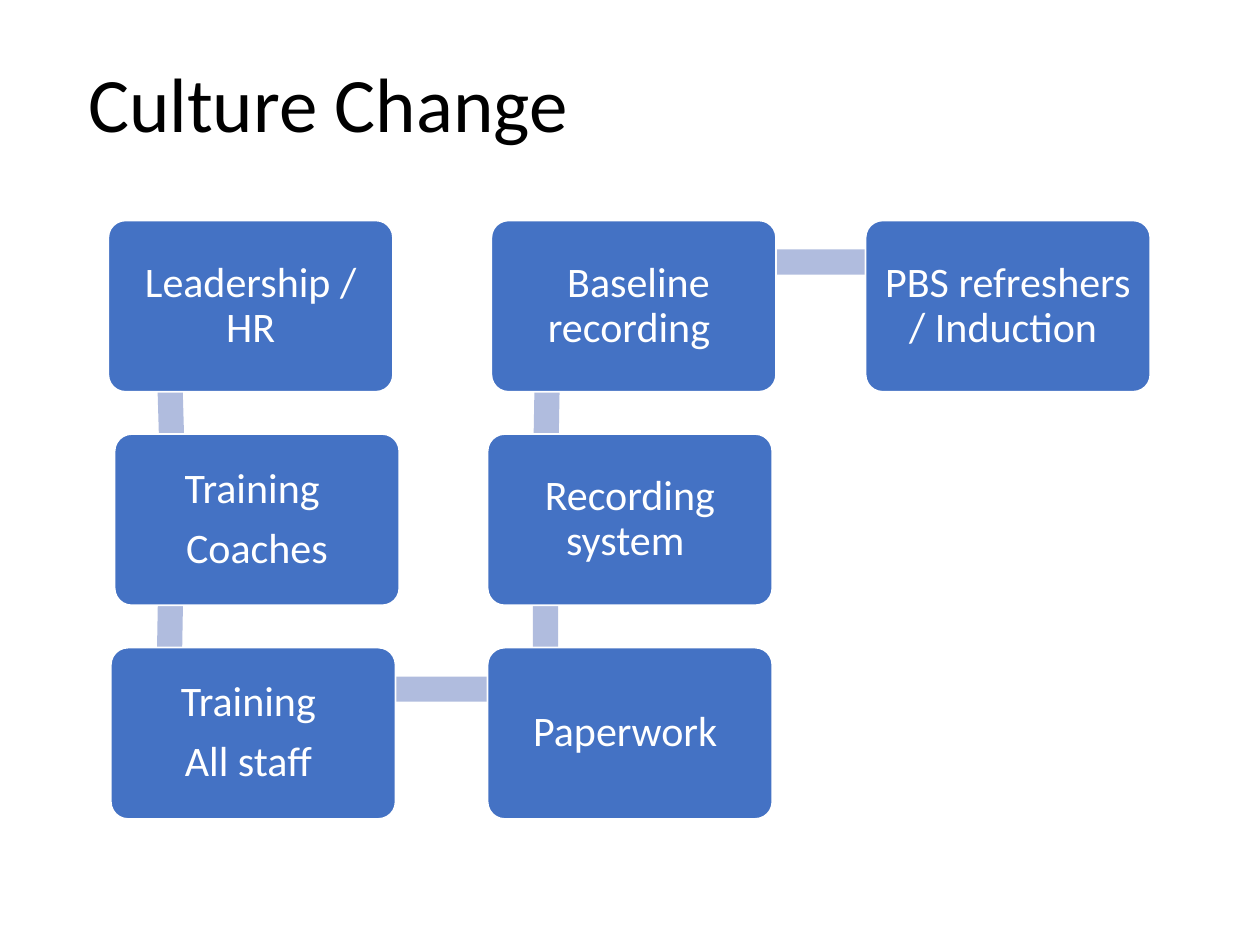
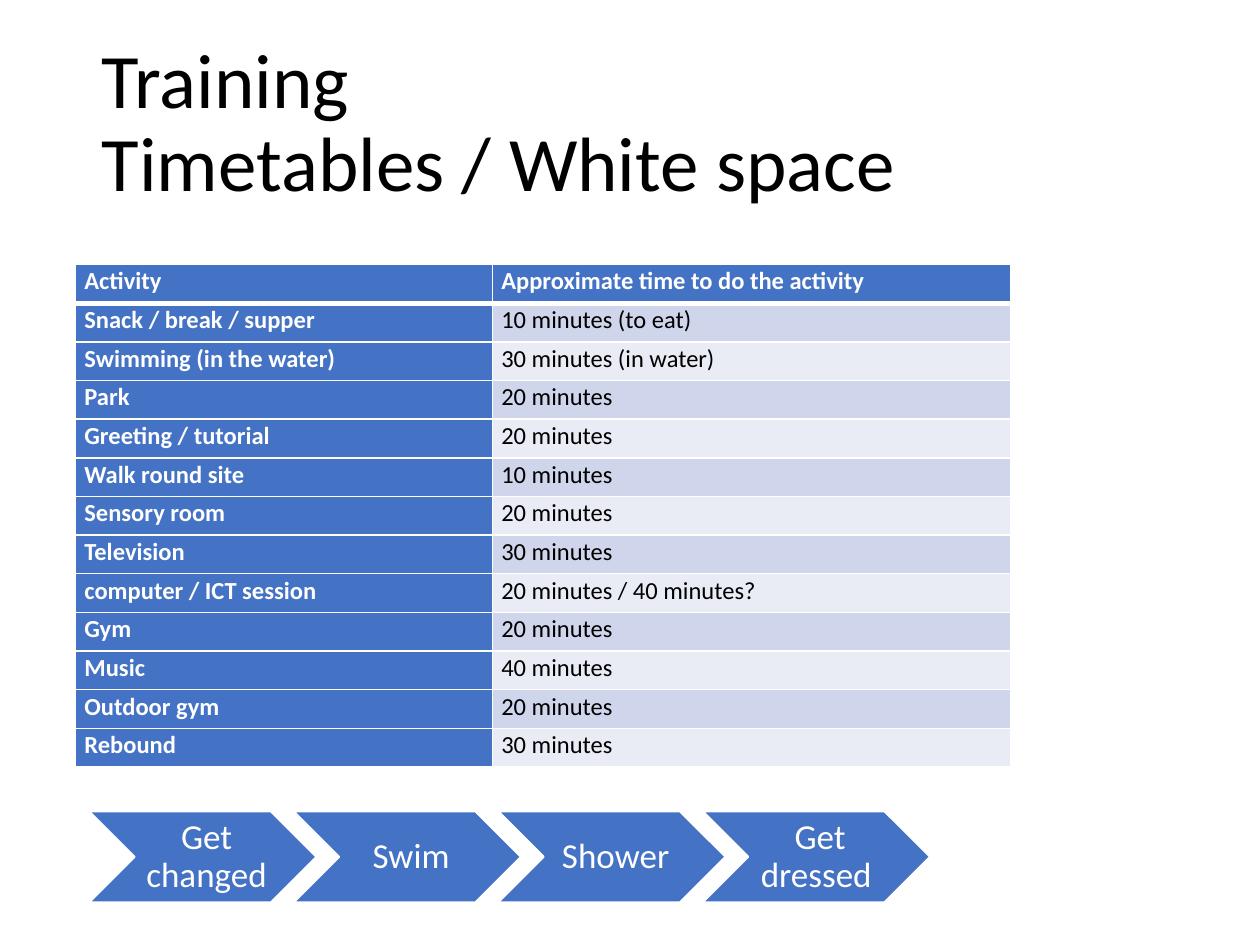
from itertools import pairwise, zip_longest
from math import atan2, degrees, hypot

from lxml.etree import SubElement
from pptx import Presentation
from pptx.dml.color import RGBColor
from pptx.enum.shapes import MSO_SHAPE
from pptx.enum.text import MSO_ANCHOR, PP_ALIGN
from pptx.oxml.ns import qn
from pptx.util import Inches, Pt

FONT = "Calibri"
BLUE, PALE_BLUE, WHITE, BLACK = "4472C4", "B0BCDE", "FFFFFF", "000000"
BANDS = "CFD5EA", "E9EBF5"
TITLE_SIZE = 6.89, 1.46

# column, row, sideways nudge, text
STEPS = [
    (0, 0, -0.01, "Leadership / HR"),
    (0, 1, 0.04, "Training \nCoaches"),
    (0, 2, 0.01, "Training \nAll staff "),
    (1, 2, 0, "Paperwork "),
    (1, 1, 0, "Recording system "),
    (1, 0, 0.03, " Baseline recording "),
    (2, 0, 0, "PBS refreshers / Induction "),
]
ACTIVITIES = [
    ("Activity", "Approximate time to do the activity"),
    ("Snack / break / supper", "10 minutes (to eat)"),
    ("Swimming (in the water)", "30 minutes (in water)"),
    ("Park", "20 minutes"),
    ("Greeting / tutorial", "20 minutes"),
    ("Walk round site", "10 minutes"),
    ("Sensory room", "20 minutes"),
    ("Television", "30 minutes"),
    ("computer / ICT session", "20 minutes / 40 minutes?"),
    ("Gym", "20 minutes"),
    ("Music", "40 minutes"),
    ("Outdoor gym", "20 minutes"),
    ("Rebound", "30 minutes"),
]
SWIM_STAGES = ["Get changed", "Swim", "Shower", "Get dressed "]


def rgb(hex_color):
    """Turn a hex string into a colour."""
    return RGBColor.from_string(hex_color)


def style_text(tf, size, color, spacing, bold=False, align=PP_ALIGN.LEFT, after=0):
    """Give every paragraph of a frame the same look."""
    for p in tf.paragraphs:
        p.alignment = align
        p.line_spacing = spacing
        p.space_after = Pt(after)
        p.font.name, p.font.size, p.font.bold = FONT, Pt(size), bold
        p.font.color.rgb = rgb(color)


def set_insets(target, sides, ends):
    """Set the margins of a frame or cell as left and right, then top and bottom."""
    target.margin_left, target.margin_right = map(Inches, sides)
    target.margin_top, target.margin_bottom = map(Inches, ends)


def add_block(slide, kind, box, fill, line=None):
    """Add a flat preset shape with a plain fill."""
    sp = slide.shapes.add_shape(kind, *map(Inches, box))
    sp.shadow.inherit = False
    sp.fill.solid()
    sp.fill.fore_color.rgb = rgb(fill)
    if line:
        sp.line.color.rgb = rgb(line)
        sp.line.width = Pt(1)
    else:
        sp.line.fill.background()
    return sp


def add_label(sp, text, size, sides, ends):
    """Write centred white text into a shape."""
    tf = sp.text_frame
    tf.word_wrap = True
    tf.vertical_anchor = MSO_ANCHOR.MIDDLE
    set_insets(tf, sides, ends)
    tf.text = text
    style_text(tf, size, WHITE, 0.9, align=PP_ALIGN.CENTER, after=0.35 * size)


def add_title(slide, text, left, top):
    """Add the slide title."""
    tf = slide.shapes.add_textbox(*map(Inches, (left, top, *TITLE_SIZE))).text_frame
    tf.word_wrap = True
    tf.vertical_anchor = MSO_ANCHOR.MIDDLE
    tf.text = text
    style_text(tf, 44, BLACK, 0.9)


def add_link(slide, start, end):
    """Add the pale bar that runs from one step to the next."""
    (x1, y1), (x2, y2) = start, end
    length, thickness = hypot(x2 - x1, y2 - y1), 0.2
    x, y = (x1 + x2) / 2 - 0.67, (y1 + y2) / 2 - 0.35
    box = x - length / 2, y - thickness / 2, length, thickness
    add_block(slide, MSO_SHAPE.RECTANGLE, box, PALE_BLUE).rotation = degrees(
        atan2(y2 - y1, x2 - x1)) % 360


def add_steps(slide, box):
    """Lay the steps on a three by three grid, joined by bars."""
    left, top, width, height = box
    card_w, card_h = 2.26, 1.36
    col_step, row_step = (width - card_w) / 2, (height - card_h) / 2
    corners = [(left + col * col_step + nudge, top + row * row_step)
               for col, row, nudge, _ in STEPS]
    centres = [(x + card_w / 2, y + card_h / 2) for x, y in corners]
    for step, (x, y), link in zip_longest(STEPS, corners, pairwise(centres)):
        if link:
            add_link(slide, *link)
        card = add_block(slide, MSO_SHAPE.ROUNDED_RECTANGLE,
                         (x, y, card_w, card_h), BLUE, WHITE)
        card.adjustments[0] = 0.1
        add_label(card, step[-1], 24, (0.1, 0.1), (0.1, 0.1))


def set_borders(cell, widths):
    """Draw white cell borders with the given width per side."""
    tc_pr = cell._tc.get_or_add_tcPr()
    for side, width in widths.items():
        ln = SubElement(tc_pr, qn(f"a:ln{side}"), w=str(Pt(width)))
        SubElement(SubElement(ln, qn("a:solidFill")), qn("a:srgbClr"), val=WHITE)


def add_timetable(slide, box):
    """Add the table of activities and their times."""
    left, top, width, height = box
    table = slide.shapes.add_table(len(ACTIVITIES), 2, *map(Inches, box)).table
    table.horz_banding = False
    for column, share in zip(table.columns, (0.446, 0.554)):
        column.width = Inches(width * share)
    for r, texts in enumerate(ACTIVITIES):
        table.rows[r].height = Inches(height / len(ACTIVITIES))
        for c, text in enumerate(texts):
            cell = table.cell(r, c)
            heading = r == 0 or c == 0
            set_borders(cell, {"L": 1, "R": 1, "T": 3 if r == 1 else 1,
                               "B": 3 if r == 0 else 1})
            cell.fill.solid()
            cell.fill.fore_color.rgb = rgb(BLUE if heading else BANDS[(r - 1) % 2])
            set_insets(cell, (0.07, 0.07), (0, 0))
            cell.text = text
            style_text(cell.text_frame, 14, WHITE if heading else BLACK, 1.07, heading)


def add_stages(slide, box):
    """Add the row of chevrons at equal steps."""
    left, top, width, height = box
    chevron_w = 1.8
    step = (width - chevron_w) / (len(SWIM_STAGES) - 1)
    for i, text in enumerate(SWIM_STAGES):
        sp = add_block(slide, MSO_SHAPE.CHEVRON,
                       (left + i * step, top, chevron_w, height), BLUE, WHITE)
        add_label(sp, text, 20, (0.09, 0.03), (0.03, 0.03))


def build_culture_slide(slide):
    """Build the culture change slide."""
    add_steps(slide, (0.87, 1.75, 8.26, 4.75))
    add_title(slide, "Culture Change", 0.6, 0.12)


def build_timetable_slide(slide):
    """Build the timetable slide."""
    add_title(slide, "Training\vTimetables / White space", 0.71, 0.26)
    add_timetable(slide, (0.6, 2.1, 7.42, 3.99))
    add_stages(slide, (0.71, 6.44, 6.67, 0.72))


def main():
    """Build and save the presentation."""
    prs = Presentation()
    prs.slide_width, prs.slide_height = Inches(10), Inches(7.5)
    for build in (build_culture_slide, build_timetable_slide):
        build(prs.slides.add_slide(prs.slide_layouts[6]))
    prs.save("out.pptx")


if __name__ == "__main__":
    main()
